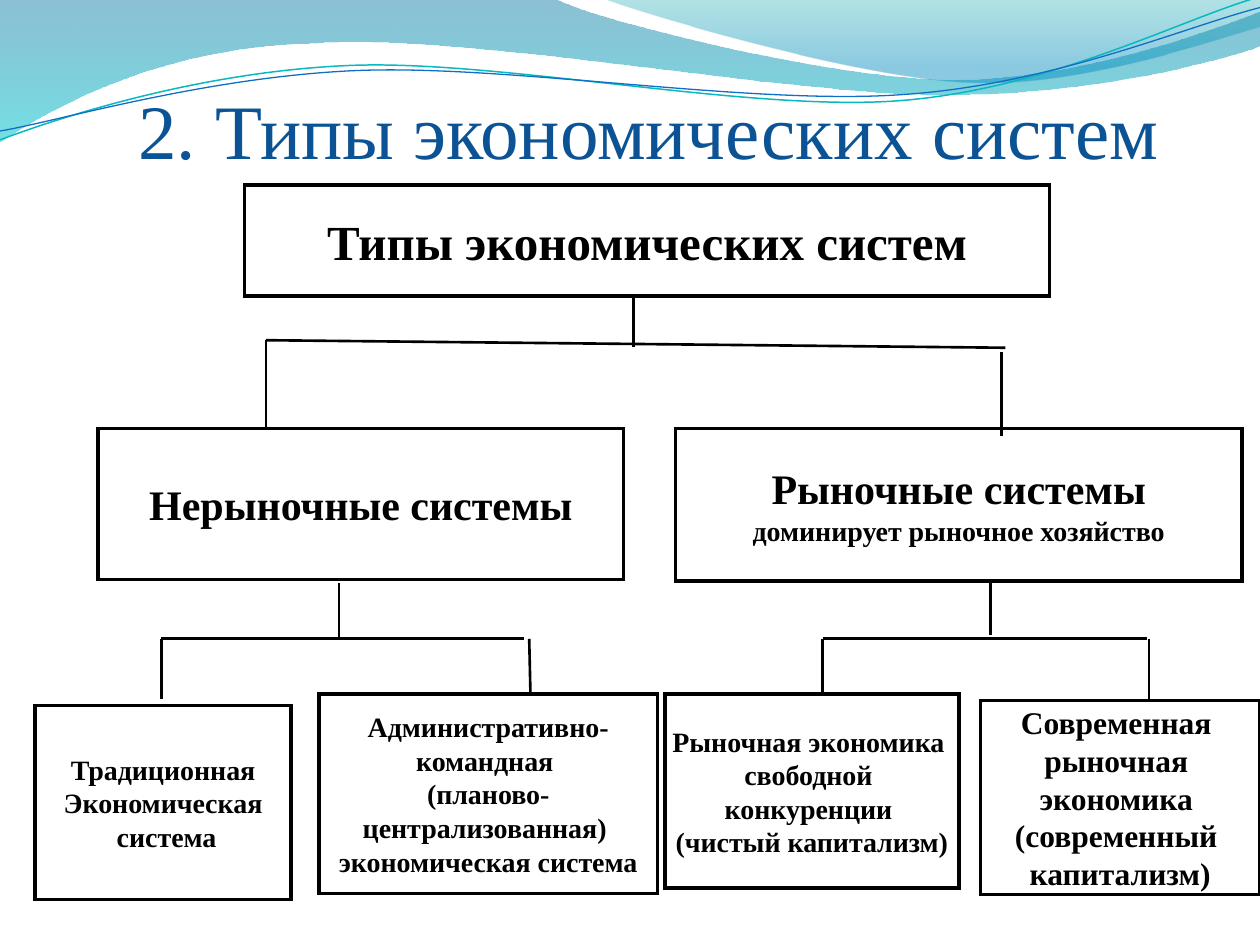
from math import cos, radians, sin

from lxml.etree import SubElement
from pptx import Presentation
from pptx.dml.color import RGBColor
from pptx.enum.shapes import MSO_CONNECTOR as CONN, MSO_SHAPE as SHAPE
from pptx.enum.text import MSO_ANCHOR as ANCHOR, PP_ALIGN as ALIGN
from pptx.oxml.ns import qn
from pptx.util import Inches, Pt

FONT = "Times New Roman"
COLORS = {"title": "0B5394", "ink": "000000", "paper": "FFFFFF",
          "teal": "0AB8BF", "blue": "0F6FC6"}

TITLE = "2. Типы экономических систем"

# (left, top, width, height), [(text, size), ...]
BOXES = [
    ((1.94, 1.47, 6.39, 0.88), [("Типы экономических систем", 28)]),
    ((5.36, 3.4, 4.5, 1.21), [("Рыночные системы", 24),
                              ("доминирует рыночное хозяйство", 16)]),
    ((0.78, 3.4, 4.17, 1.2), [("Нерыночные системы", 24)]),
    ((5.28, 5.51, 2.33, 1.54), [("Рыночная экономика ", 16), ("свободной ", 16),
                                ("конкуренции ", 16), ("(чистый капитализм)", 16)]),
    ((7.78, 5.56, 2.22, 1.54), [("Современная ", 18), ("рыночная ", 18), ("экономика ", 18),
                                ("(современный ", 18), ("капитализм)", 18)]),
    ((2.53, 5.51, 2.69, 1.58), [("Административно-", 16), ("командная ", 16),
                                ("(планово-", 16), ("централизованная) ", 16),
                                ("экономическая система", 16)]),
    ((0.28, 5.6, 2.03, 1.54), [("Традиционная", 16), ("Экономическая", 16),
                               (" система", 16)]),
]

# Each branch: crossbar, stem, left drop, right drop, as (x1, y1, x2, y2)
BRANCHES = [
    [(2.11, 2.7, 7.98, 2.76), (5.03, 2.34, 5.03, 2.75),
     (2.11, 2.7, 2.11, 3.41), (7.95, 2.79, 7.95, 3.46)],
    [(1.28, 5.07, 4.16, 5.07), (2.69, 4.63, 2.69, 5.06),
     (1.28, 5.07, 1.28, 5.55), (4.2, 5.07, 4.21, 5.5)],
    [(6.53, 5.07, 9.1, 5.07), (7.86, 4.63, 7.86, 5.04),
     (6.53, 5.07, 6.53, 5.51), (9.12, 5.07, 9.12, 5.55)],
]

# Outlines: one point is a straight step, three points are a Bezier step
BANDS = [
    ([[(0, 0)], [(4.4, -0.01)], [(4.76, 0.17), (6.64, 0.63), (7.58, 0.63)],
      [(8.53, 0.63), (9.58, 0.26), (10, 0.09)], [(10.01, 0.36)],
      [(9.83, 0.44), (8.7, 0.76), (7.46, 0.75)],
      [(6.22, 0.75), (3.82, 0.28), (2.57, 0.34)],
      [(1.29, 0.36), (0.46, 0.83), (-0.01, 1.13)], [(0, 0)]],
     [(0, "0074A1", 45), (1, "00C6CF", 55)]),
    ([[(4.79, -0.01)], [(5.09, 0.11), (6.82, 0.62), (7.69, 0.65)],
      [(8.56, 0.69), (9.61, 0.32), (10, 0.21)], [(10, 0)], [(4.79, -0.01)]],
     [(0, "00A1A9", 30), (0.8, "008BBF", 45)]),
]
WAVES = [
    ([[(0, 1.11)], [(0.48, 0.93), (1.58, 0.57), (2.77, 0.52)],
      [(3.95, 0.47), (5.93, 0.89), (7.13, 0.8)],
      [(8.33, 0.71), (9.38, 0.15), (9.98, -0.02)]], "teal", 0.85),
    ([[(0, 1.04)], [(0.47, 0.96), (1.64, 0.61), (2.83, 0.56)],
      [(4.03, 0.51), (5.97, 0.84), (7.17, 0.75)],
      [(8.36, 0.67), (9.41, 0.21), (10, 0.06)]], "blue", 0.75),
]
WAVE_TILT = 2.7
WAVE_CENTER = (4.99, 0.58)


def rgb(name):
    return RGBColor.from_string(COLORS[name])


def set_alpha(fill_xml, percents):
    """Give each colour found in the fill its opacity, in order."""
    for clr, percent in zip(fill_xml.iter(qn("a:srgbClr")), percents):
        SubElement(clr, qn("a:alpha")).set("val", str(percent * 1000))


def level(point):
    """Turn a wave point back to where it lies before the tilt."""
    a, (cx, cy) = radians(WAVE_TILT), WAVE_CENTER
    dx, dy = point[0] - cx, point[1] - cy
    return cx + dx * cos(a) - dy * sin(a), cy + dx * sin(a) + dy * cos(a)


def add_outline(shapes, steps, close):
    """Build a freeform through the step ends, then bend its Bezier steps."""
    steps = [[(Inches(x), Inches(y)) for x, y in step] for step in steps]
    builder = shapes.build_freeform(*steps[0][0])
    builder.add_line_segments([step[-1] for step in steps[1:]], close=close)
    sp = builder.convert_to_shape()
    sp.shadow.inherit = False
    segments = list(sp.element.iter(qn("a:lnTo")))
    for segment, step in zip(segments, steps[1:]):
        if len(step) == 3:
            curve = segment.makeelement(qn("a:cubicBezTo"))
            for x, y in step:
                pt = SubElement(curve, qn("a:pt"))
                pt.set("x", str(x - sp.left))
                pt.set("y", str(y - sp.top))
            segment.getparent().replace(segment, curve)
    return sp


def add_band(shapes, steps, stops):
    sp = add_outline(shapes, steps, True)
    sp.line.fill.background()
    sp.fill.gradient()
    sp.fill.gradient_angle = 270
    for stop, (position, color, _) in zip(sp.fill.gradient_stops, stops):
        stop.position = position
        stop.color.rgb = RGBColor.from_string(color)
    set_alpha(sp.element.spPr.find(qn("a:gradFill")), [alpha for *_, alpha in stops])


def add_wave(shapes, steps, color, width):
    sp = add_outline(shapes, [[level(pt) for pt in step] for step in steps], False)
    sp.rotation = 360 - WAVE_TILT
    sp.fill.background()
    sp.line.color.rgb = rgb(color)
    sp.line.width = Pt(width)


def write(tf, lines, color, bold):
    for i, (text, size) in enumerate(lines):
        p = tf.add_paragraph() if i else tf.paragraphs[0]
        p.alignment = ALIGN.CENTER
        r = p.add_run()
        r.text = text
        r.font.name, r.font.size, r.font.bold = FONT, Pt(size), bold
        r.font.color.rgb = rgb(color)


def add_title(shapes):
    tf = shapes.add_textbox(*map(Inches, (0.5, 0.21, 9.3, 1.18))).text_frame
    tf.word_wrap = True
    tf.vertical_anchor = ANCHOR.BOTTOM
    tf.margin_left = tf.margin_right = tf.margin_bottom = 0
    write(tf, [(TITLE, 44)], "title", False)


def add_box(shapes, place, lines):
    sp = shapes.add_shape(SHAPE.RECTANGLE, *map(Inches, place))
    sp.shadow.inherit = False
    sp.fill.solid()
    sp.fill.fore_color.rgb = rgb("paper")
    set_alpha(sp.element.spPr.find(qn("a:solidFill")), [40])
    sp.line.color.rgb = rgb("ink")
    sp.line.width = Pt(2)
    SubElement(sp.element.spPr.find(qn("a:ln")), qn("a:miter")).set("lim", "800000")
    tf = sp.text_frame
    tf.word_wrap = False
    tf.vertical_anchor = ANCHOR.MIDDLE
    write(tf, lines, "ink", True)


def add_line(shapes, ends):
    line = shapes.add_connector(CONN.STRAIGHT, *map(Inches, ends))
    line.line.color.rgb = rgb("ink")
    line.line.width = Pt(1.5)
    SubElement(line.element.spPr, qn("a:effectLst"))


def main():
    prs = Presentation()
    prs.slide_width, prs.slide_height = Inches(10), Inches(7.5)
    s = prs.slides.add_slide(prs.slide_layouts[6])
    for band in BANDS:
        add_band(s.shapes, *band)
    waves = s.shapes.add_group_shape().shapes
    for wave in WAVES:
        add_wave(waves, *wave)
    add_title(s.shapes)
    tree = s.shapes.add_group_shape().shapes
    for box in BOXES:
        add_box(tree, *box)
    for branch in BRANCHES:
        for ends in branch:
            add_line(tree, ends)
    prs.save("out.pptx")


if __name__ == "__main__":
    main()
